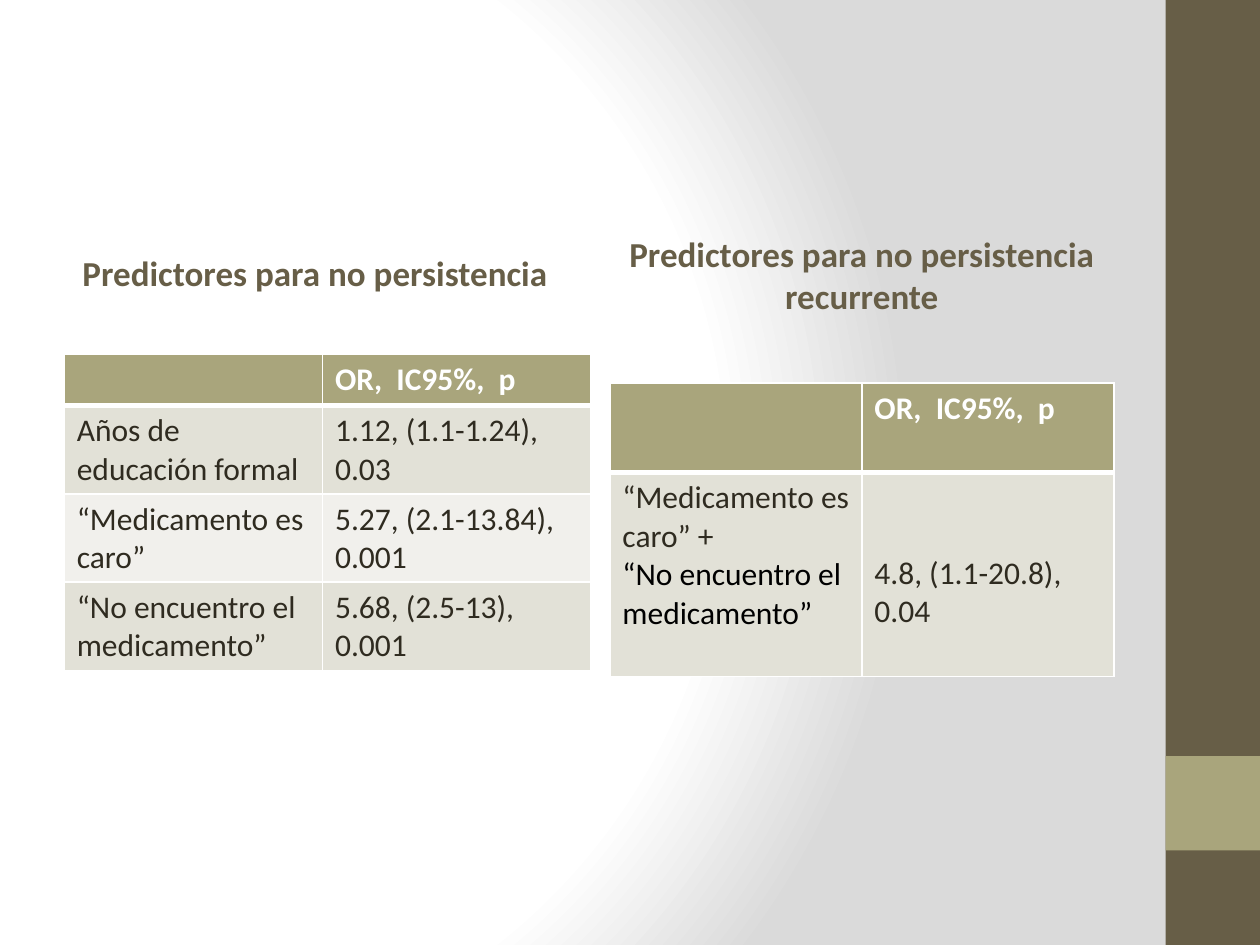
from lxml import etree
from pptx import Presentation
from pptx.dml.color import RGBColor
from pptx.enum.shapes import MSO_SHAPE
from pptx.enum.text import MSO_ANCHOR, PP_ALIGN
from pptx.oxml import parse_xml
from pptx.oxml.ns import nsdecls, qn
from pptx.util import Inches, Pt

RECTANGLE = MSO_SHAPE.RECTANGLE
BOTTOM = MSO_ANCHOR.BOTTOM
CENTER = PP_ALIGN.CENTER

BROWN, OLIVE, INK = "675E47", "A9A57C", "2F2B20"
WHITE, BLACK, GREY = "FFFFFF", "000000", "DADADA"
BANDS = ("E2E1D7", "F1F0EC")
HEADER = "OR,  IC95%,  p"


def color(value):
    return RGBColor.from_string(value)


class SlideBuilder:
    font_name = "Calibri"

    def __init__(self, slide):
        self.slide = slide

    def background(self, stops):
        fill = self.slide.background.fill
        fill.solid()
        solid = self.slide.background._cSld.find(".//" + qn("a:solidFill"))
        stop_xml = "".join(
            f'<a:gs pos="{position * 1000}"><a:srgbClr val="{value}"/></a:gs>'
            for position, value in stops)
        gradient = parse_xml(
            f'<a:gradFill {nsdecls("a")} rotWithShape="1"><a:gsLst>{stop_xml}</a:gsLst>'
            '<a:path path="circle"><a:fillToRect l="20000" t="50000" r="100000" b="50000"/>'
            '</a:path></a:gradFill>')
        solid.getparent().replace(solid, gradient)

    def rectangle(self, left, top, width, height, fill):
        shape = self.slide.shapes.add_shape(
            RECTANGLE, Inches(left), Inches(top), Inches(width), Inches(height))
        shape.shadow.inherit = False
        shape.fill.solid()
        shape.fill.fore_color.rgb = color(fill)
        shape.line.fill.background()

    def format_runs(self, paragraph, size, value, bold=False):
        for run in paragraph.runs:
            run.font.name = self.font_name
            run.font.size = Pt(size)
            run.font.bold = bold
            run.font.color.rgb = color(value)

    def heading(self, left, top, text):
        box = self.slide.shapes.add_textbox(
            Inches(left), Inches(top), Inches(4), Inches(0.7))
        text_frame = box.text_frame
        text_frame.word_wrap = True
        text_frame.vertical_anchor = BOTTOM
        text_frame.text = text
        paragraph = text_frame.paragraphs[0]
        paragraph.alignment = CENTER
        self.format_runs(paragraph, 20, BROWN, bold=True)

    def borders(self, cell, top, bottom):
        properties = cell._tc.get_or_add_tcPr()
        widths = {"a:lnL": 1, "a:lnR": 1, "a:lnT": top, "a:lnB": bottom}
        for index, (tag, width) in enumerate(widths.items()):
            line = etree.Element(qn(tag), w=str(Pt(width)))
            fill = etree.SubElement(line, qn("a:solidFill"))
            etree.SubElement(fill, qn("a:srgbClr"), val=WHITE)
            properties.insert(index, line)

    def table(self, left, top, column_widths, row_heights, rows):
        table = self.slide.shapes.add_table(
            len(rows), len(column_widths), Inches(left), Inches(top),
            Inches(sum(column_widths)), Inches(sum(row_heights))).table
        for column, width in zip(table.columns, column_widths):
            column.width = Inches(width)
        for row, height in zip(table.rows, row_heights):
            row.height = Inches(height)
        for row_index, texts in enumerate(rows):
            is_header = row_index == 0
            for column_index, text in enumerate(texts):
                cell = table.cell(row_index, column_index)
                cell.fill.solid()
                cell.fill.fore_color.rgb = color(
                    OLIVE if is_header else BANDS[(row_index - 1) % 2])
                self.borders(cell, top=3 if row_index == 1 else 1,
                             bottom=3 if is_header else 1)
                cell.text_frame.text = text
                for paragraph in cell.text_frame.paragraphs:
                    self.format_runs(paragraph, 18, WHITE if is_header else INK, is_header)
        return table


def main():
    presentation = Presentation()
    presentation.slide_width = Inches(10)
    presentation.slide_height = Inches(7.5)
    builder = SlideBuilder(presentation.slides.add_slide(presentation.slide_layouts[6]))

    # Background and side band
    builder.background([(0, WHITE), (75, WHITE), (100, GREY)])
    builder.rectangle(9.25, 0, 0.75, 7.5, BROWN)
    builder.rectangle(9.25, 6, 0.75, 0.75, OLIVE)

    # Predictors of non-persistence
    builder.heading(0.5, 1.68, "Predictores para no persistencia")
    builder.table(0.51, 2.81, [2.05, 2.13], [0.41] + [0.7] * 3, [
        ("", HEADER),
        ("Años de educación formal", "1.12, (1.1-1.24), 0.03"),
        ("“Medicamento es caro”", "5.27, (2.1-13.84), 0.001"),
        ("“No encuentro el medicamento”", "5.68, (2.5-13),\n0.001"),
    ])

    # Predictors of recurrent non-persistence
    builder.heading(4.84, 1.86, "Predictores para no persistencia recurrente")
    recurrent = builder.table(4.84, 3.04, [2, 2], [0.71, 1.62], [
        ("", HEADER),
        ("“Medicamento es caro” +\n“No encuentro el medicamento”", "4.8, (1.1-20.8), 0.04"),
    ])
    second_reason = recurrent.cell(1, 0).text_frame.paragraphs[1]
    builder.format_runs(second_reason, 18, BLACK)
    recurrent.cell(1, 1).margin_top = Inches(0.65)

    presentation.save("out.pptx")


if __name__ == "__main__":
    main()
